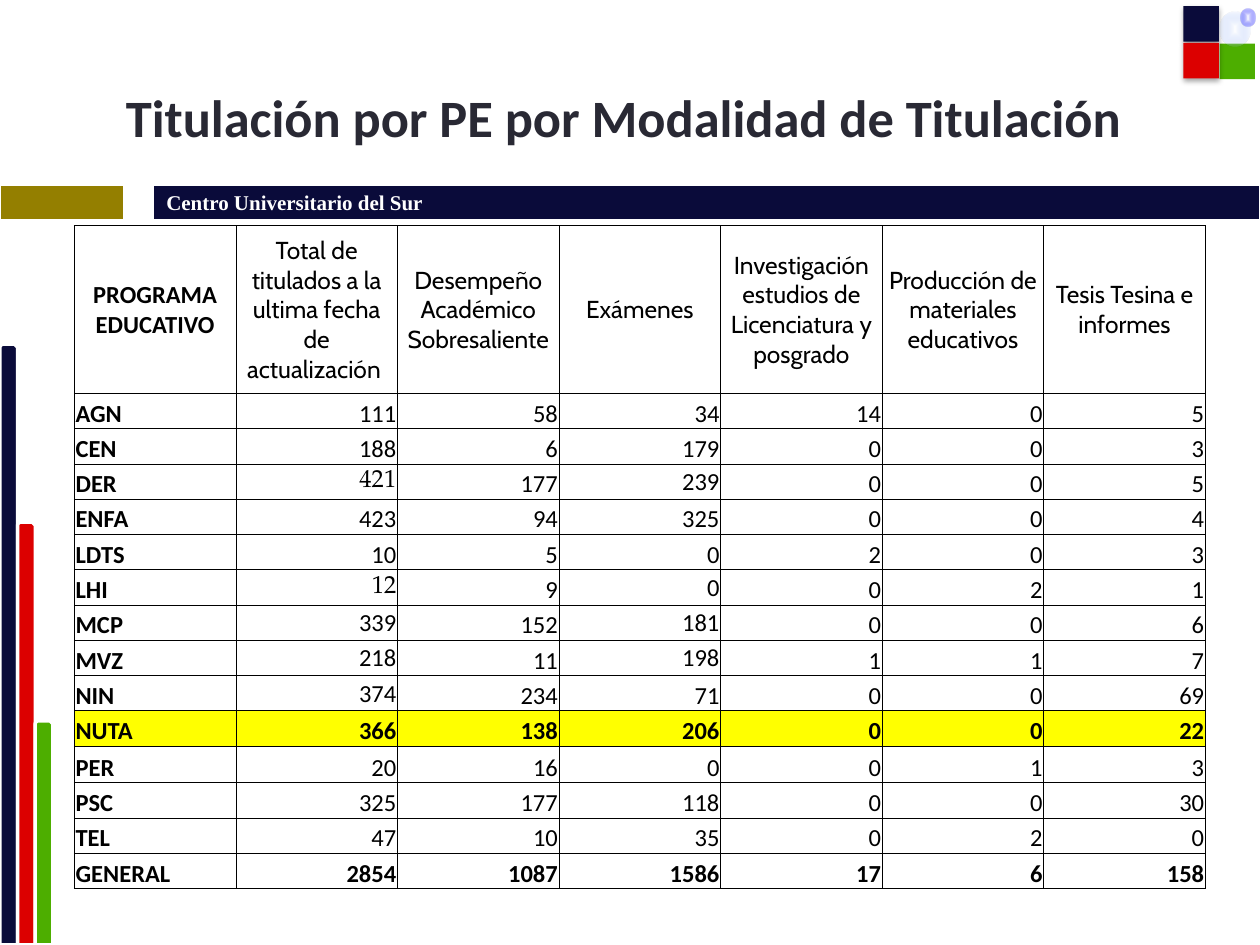
from lxml import etree
from pptx import Presentation
from pptx import util as u
from pptx.dml.color import RGBColor
from pptx.enum import shapes, text
from pptx.oxml import ns

WHITE = RGBColor(0xFF, 0xFF, 0xFF)
BLACK = RGBColor(0x00, 0x00, 0x00)
NAVY = RGBColor(0x0A, 0x0B, 0x3A)
RED = RGBColor(0xDC, 0x00, 0x00)
GREEN = RGBColor(0x4D, 0xAE, 0x00)
OLIVE = RGBColor(0x94, 0x7F, 0x00)
YELLOW = RGBColor(0xFF, 0xFF, 0x00)
INK = RGBColor(0x29, 0x29, 0x34)
PALE_BLUE = RGBColor(0xA8, 0xC1, 0xFA)
BLUE = RGBColor(0x00, 0x00, 0xFF)

SHAPE = shapes.MSO_SHAPE
ALIGN = text.PP_ALIGN
ANCHOR = text.MSO_ANCHOR

HEADERS = [
    "PROGRAMA EDUCATIVO",
    "Total de titulados a la ultima fecha de actualización ",
    "Desempeño Académico Sobresaliente",
    "Exámenes",
    "Investigación estudios de Licenciatura y posgrado",
    "Producción de materiales educativos",
    "Tesis Tesina e informes",
]
PROGRAMS = [
    ("AGN", 111, 58, 34, 14, 0, 5),
    ("CEN", 188, 6, 179, 0, 0, 3),
    ("DER", 421, 177, 239, 0, 0, 5),
    ("ENFA", 423, 94, 325, 0, 0, 4),
    ("LDTS", 10, 5, 0, 2, 0, 3),
    ("LHI", 12, 9, 0, 0, 2, 1),
    ("MCP", 339, 152, 181, 0, 0, 6),
    ("MVZ", 218, 11, 198, 1, 1, 7),
    ("NIN", 374, 234, 71, 0, 0, 69),
    ("NUTA", 366, 138, 206, 0, 0, 22),
    ("PER", 20, 16, 0, 0, 1, 3),
    ("PSC", 325, 177, 118, 0, 0, 30),
    ("TEL", 47, 10, 35, 0, 2, 0),
    ("GENERAL", 2854, 1087, 1586, 17, 6, 158),
]
MIDDLE_COLUMNS = {"DER": (1, 3), "LHI": (1, 3), "MCP": (1, 3), "MVZ": (1, 3), "NIN": (1,)}
SERIF_TOTALS = ("DER", "LHI")
BOLD_ROWS = ("NUTA", "GENERAL")


class PageBuilder:
    font = "Calibri"
    size = 14

    def __init__(self, page):
        self.page = page

    def span(self, para, words, size=size, font=font, color=BLACK, bold=False):
        span = para.add_run()
        span.text = words
        span.font.size = u.Pt(size)
        span.font.name = font
        span.font.color.rgb = color
        span.font.bold = bold

    def title(self, words, left, top, width, height):
        box = self.page.shapes.title
        box.left, box.top = u.Pt(left), u.Pt(top)
        box.width, box.height = u.Pt(width), u.Pt(height)
        box.text_frame.vertical_anchor = ANCHOR.MIDDLE
        para = box.text_frame.paragraphs[0]
        para.alignment = ALIGN.CENTER
        self.span(para, words, size=30, color=INK, bold=True)

    def shape(self, kind, left, top, width, height, fill, outline=None):
        shape = self.page.shapes.add_shape(
            kind, u.Pt(left), u.Pt(top), u.Pt(width), u.Pt(height))
        shape.shadow.inherit = False
        shape.fill.solid()
        shape.fill.fore_color.rgb = fill
        if outline is None:
            shape.line.fill.background()
        else:
            shape.line.color.rgb = outline
            shape.line.width = u.Pt(2)
        return shape

    def drop_shadow(self, shape):
        effects = shape.element.spPr.find(ns.qn("a:effectLst"))
        effects.append(etree.fromstring(
            f'<a:outerShdw {ns.nsdecls("a")} blurRad="{u.Pt(3.1)}" dist="{u.Pt(1.8)}" '
            f'dir="5400000" rotWithShape="0"><a:srgbClr val="{BLACK}">'
            '<a:alpha val="35000"/></a:srgbClr></a:outerShdw>'))

    def glow(self, left, top, width, height, color, alpha):
        oval = self.shape(SHAPE.OVAL, left, top, width, height, color)
        solid = oval.element.spPr.find(ns.qn("a:solidFill"))
        gradient = etree.fromstring(
            f'<a:gradFill {ns.nsdecls("a")} rotWithShape="1"><a:gsLst>'
            f'<a:gs pos="0"><a:srgbClr val="{WHITE}"/></a:gs>'
            f'<a:gs pos="100000"><a:srgbClr val="{color}"><a:alpha val="{alpha * 1000}"/>'
            '</a:srgbClr></a:gs></a:gsLst><a:path path="shape">'
            '<a:fillToRect l="50000" t="50000" r="50000" b="50000"/></a:path></a:gradFill>')
        solid.getparent().replace(solid, gradient)

    def table(self, left, top, widths, heights):
        frame = self.page.shapes.add_table(
            len(heights), len(widths), u.Pt(left), u.Pt(top),
            u.Pt(sum(widths)), u.Pt(sum(heights)))
        table = frame.table
        table.first_row = table.horz_banding = False
        for column, width in zip(table.columns, widths):
            column.width = u.Pt(width)
        for row, height in zip(table.rows, heights):
            row.height = u.Pt(height)
        return table

    def cell(self, cell, words, fill=None, align=ALIGN.LEFT, anchor=ANCHOR.MIDDLE,
             insets=(0.7, 0.7, 0.7, 0), border=BLACK, widths=(0.5,) * 4, **style):
        properties = cell._tc.get_or_add_tcPr()
        for side, width in zip("LRTB", widths):
            properties.append(etree.fromstring(
                f'<a:ln{side} {ns.nsdecls("a")} w="{u.Pt(width)}"><a:solidFill>'
                f'<a:srgbClr val="{border}"/></a:solidFill></a:ln{side}>'))
        if fill is None:
            cell.fill.background()
        else:
            cell.fill.solid()
            cell.fill.fore_color.rgb = fill
        cell.margin_left, cell.margin_top, cell.margin_right, cell.margin_bottom = map(u.Pt, insets)
        cell.vertical_anchor = anchor
        para = cell.text_frame.paragraphs[0]
        para.alignment = align
        self.span(para, words, **style)


def add_band(builder):
    band = builder.table(0, 105.84, [70.56, 17.28, 632.16], [20.6])
    columns = [("", OLIVE), ("", None), ("Centro Universitario del Sur", NAVY)]
    for column, (words, fill) in enumerate(columns):
        builder.cell(band.cell(0, column), words, fill, insets=(7.2, 0, 7.2, 0),
                     border=WHITE, widths=(1, 1, 1, 3), size=12,
                     font="Times New Roman", color=WHITE, bold=True)


def add_decoration(builder):
    for index, (top, color) in enumerate([(196.7, NAVY), (298.4, RED), (411.9, GREEN)]):
        builder.shape(SHAPE.SNIP_ROUND_RECTANGLE, 10.08 * index, top, 10.08,
                      540 - top, color, WHITE)
    builder.shape(SHAPE.RECTANGLE, 696.9, 25, 20.3, 20.3, GREEN)
    for top, color in [(3.5, NAVY), (24.5, RED)]:
        builder.drop_shadow(builder.shape(SHAPE.RECTANGLE, 676.3, top, 20.3, 20.3, color))
    builder.glow(697, 6.5, 17.3, 20.2, PALE_BLUE, 10)
    builder.glow(709, 5, 8.2, 10.1, BLUE, 20)


def add_degrees(builder):
    heights = [96] + [20.16] * 10 + [21] + [20.16] * 3
    table = builder.table(42.5, 128.8, [92.35] * len(HEADERS), heights)
    for column, words in enumerate(HEADERS):
        builder.cell(table.cell(0, column), words, align=ALIGN.CENTER,
                     font="Cabin" if column else builder.font, bold=column == 0)
    for row, values in enumerate(PROGRAMS, 1):
        name = values[0]
        for column, value in enumerate(values):
            middle = column in MIDDLE_COLUMNS.get(name, ())
            serif = column == 1 and name in SERIF_TOTALS
            builder.cell(
                table.cell(row, column), str(value),
                fill=YELLOW if name == "NUTA" else None,
                align=ALIGN.RIGHT if column else ALIGN.LEFT,
                anchor=ANCHOR.MIDDLE if middle else ANCHOR.BOTTOM,
                font="TeX Gyre Pagella" if serif else builder.font,
                bold=column == 0 or name in BOLD_ROWS)


def main():
    deck = Presentation()
    deck.slide_width, deck.slide_height = u.Pt(720), u.Pt(540)
    builder = PageBuilder(deck.slides.add_slide(deck.slide_layouts[5]))
    add_band(builder)
    add_decoration(builder)
    builder.title("Titulación por PE por Modalidad de Titulación ", 36, 21.6, 648, 90)
    add_degrees(builder)
    deck.save("out.pptx")


if __name__ == "__main__":
    main()
